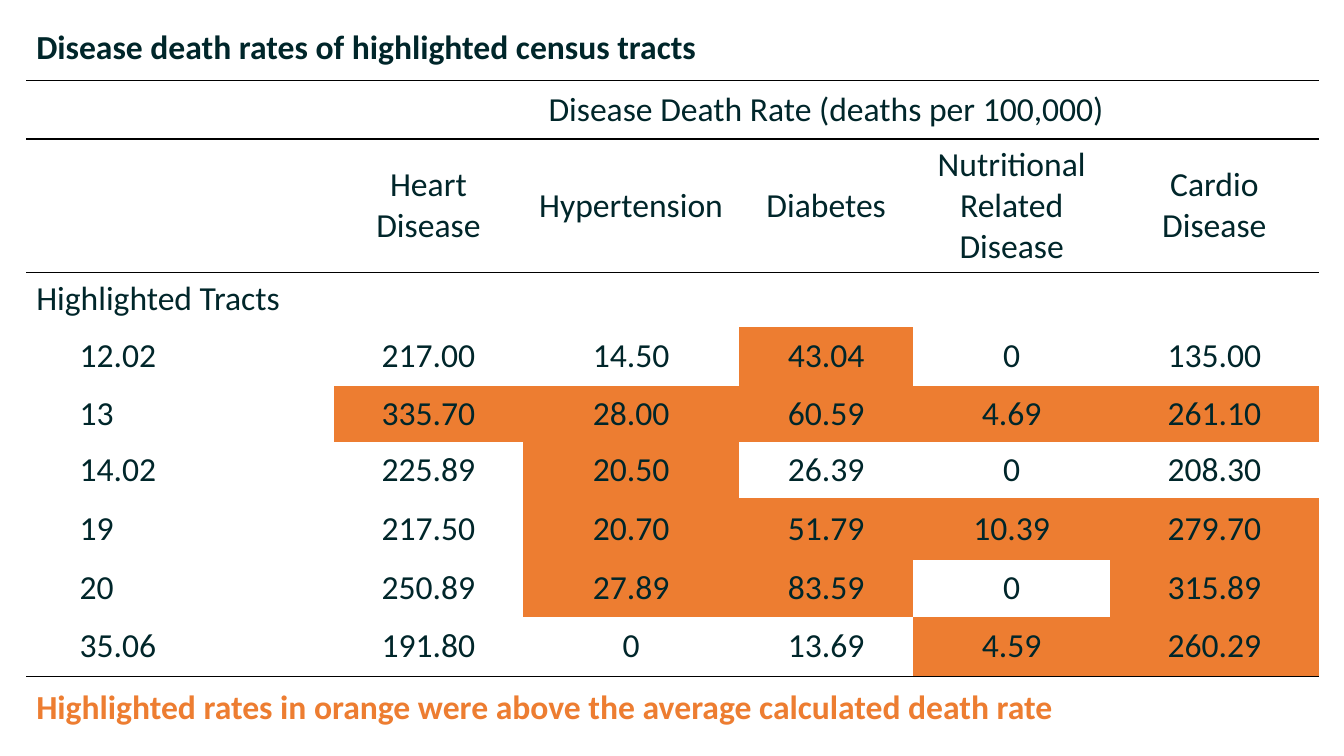
from typing import NamedTuple

from lxml.etree import SubElement
from pptx import Presentation
from pptx.dml.color import RGBColor
from pptx.enum.shapes import MSO_SHAPE
from pptx.enum.text import MSO_ANCHOR, PP_ALIGN
from pptx.oxml.ns import qn
from pptx.slide import Slide
from pptx.table import Table, _Cell as Cell
from pptx.util import Inches, Pt

WHITE = RGBColor(0xFF, 0xFF, 0xFF)
BLACK = RGBColor(0x00, 0x00, 0x00)
INK = RGBColor(0x00, 0x26, 0x2A)
ORANGE = RGBColor(0xED, 0x7D, 0x31)
PLAIN_STYLE_ID = "{2D5ABB26-0587-4C30-8999-92F81FD0307C}"

COLUMN_WIDTHS = [0.43, 2.62, 1.88, 2.14, 1.73, 1.95, 2.07]
ROW_HEIGHTS = [0.64, 0.58, 1.32, 0.54, 0.59, 0.56, 0.55, 0.62, 0.56, 0.59, 0.64]
TITLE_ROW, GROUP_ROW, HEADING_ROW, SECTION_ROW, FIRST_TRACT_ROW = range(5)
NOTE_ROW = len(ROW_HEIGHTS) - 1
LAST_COLUMN = len(COLUMN_WIDTHS) - 1
FIRST_RATE_COLUMN = 2
RULED_ROWS = {TITLE_ROW, GROUP_ROW, NOTE_ROW - 1}

DISEASES = [
    "Heart Disease",
    "Hypertension",
    "Diabetes",
    "Nutritional Related Disease",
    "Cardio\nDisease",
]


class Tract(NamedTuple):
    """A census tract; above_average holds the indexes of its highlighted rates."""
    name: str
    rates: list[str]
    above_average: set[int]


TRACTS = [
    Tract("12.02", ["217.00", "14.50", "43.04", "0", "135.00"], {2}),
    Tract("13", ["335.70", "28.00", "60.59", "4.69", "261.10"], {0, 1, 2, 3, 4}),
    Tract("14.02", ["225.89", "20.50", "26.39", "0", "208.30"], {1}),
    Tract("19", ["217.50", "20.70", "51.79", "10.39", "279.70"], {1, 2, 3, 4}),
    Tract("20", ["250.89", "27.89", "83.59", "0", "315.89"], {1, 2, 4}),
    Tract("35.06", ["191.80", "0", "13.69", "4.59", "260.29"], {3, 4}),
]


def write_text(cell: Cell, text: str, *, bold: bool = False, color: RGBColor = INK,
               align: PP_ALIGN = PP_ALIGN.LEFT) -> None:
    cell.text = text
    cell.vertical_anchor = MSO_ANCHOR.MIDDLE
    for paragraph in cell.text_frame.paragraphs:
        paragraph.alignment = align
        font = paragraph.runs[0].font
        font.name, font.size, font.bold = "Calibri", Pt(24), bold
        font.color.rgb = color


def add_border(cell: Cell, side: str) -> None:
    line = SubElement(cell._tc.get_or_add_tcPr(), qn(f"a:ln{side}"), w=str(Pt(1)))
    SubElement(SubElement(line, qn("a:solidFill")), qn("a:srgbClr"), val=str(BLACK))


def add_panel(slide: Slide) -> None:
    panel = slide.shapes.add_shape(
        MSO_SHAPE.RECTANGLE, Inches(0.06), Inches(0.12), Inches(13.22), Inches(7.25))
    panel.shadow.inherit = False
    panel.fill.solid()
    panel.fill.fore_color.rgb = WHITE
    panel.line.color.rgb = WHITE
    panel.line.width = Pt(1)


def add_plain_table(slide: Slide) -> Table:
    """Add an empty, unstyled table with its horizontal rules."""
    table = slide.shapes.add_table(
        len(ROW_HEIGHTS), len(COLUMN_WIDTHS), Inches(0.26), Inches(0.16),
        Inches(sum(COLUMN_WIDTHS)), Inches(sum(ROW_HEIGHTS))).table
    table.first_row = table.horz_banding = False
    table._tbl.tblPr.find(qn("a:tableStyleId")).text = PLAIN_STYLE_ID
    for column, width in zip(table.columns, COLUMN_WIDTHS):
        column.width = Inches(width)
    for row_index, (row, height) in enumerate(zip(table.rows, ROW_HEIGHTS)):
        row.height = Inches(height)
        for cell in row.cells:
            if row_index - 1 in RULED_ROWS:
                add_border(cell, "T")
            if row_index in RULED_ROWS:
                add_border(cell, "B")
            cell.fill.background()
    return table


def merge_columns(table: Table, row: int, first: int, last: int) -> Cell:
    cell = table.cell(row, first)
    cell.merge(table.cell(row, last))
    return cell


def fill_table(table: Table) -> None:
    write_text(merge_columns(table, TITLE_ROW, 0, LAST_COLUMN),
               "Disease death rates of highlighted census tracts", bold=True)
    for row in (GROUP_ROW, HEADING_ROW):
        merge_columns(table, row, 0, 1)
    write_text(merge_columns(table, GROUP_ROW, FIRST_RATE_COLUMN, LAST_COLUMN),
               "Disease Death Rate (deaths per 100,000)", align=PP_ALIGN.CENTER)
    for column, disease in enumerate(DISEASES, FIRST_RATE_COLUMN):
        write_text(table.cell(HEADING_ROW, column), disease, align=PP_ALIGN.CENTER)
    write_text(merge_columns(table, SECTION_ROW, 0, 1), "Highlighted Tracts")

    for row, tract in enumerate(TRACTS, FIRST_TRACT_ROW):
        write_text(table.cell(row, 1), tract.name)
        for index, rate in enumerate(tract.rates):
            cell = table.cell(row, FIRST_RATE_COLUMN + index)
            write_text(cell, rate, align=PP_ALIGN.CENTER)
            if index in tract.above_average:
                cell.fill.solid()
                cell.fill.fore_color.rgb = ORANGE

    write_text(merge_columns(table, NOTE_ROW, 0, LAST_COLUMN),
               "Highlighted rates in orange were above the average calculated death rate",
               bold=True, color=ORANGE)


def main() -> None:
    presentation = Presentation()
    presentation.slide_width = Inches(13.33)
    presentation.slide_height = Inches(7.5)
    slide = presentation.slides.add_slide(presentation.slide_layouts[6])
    add_panel(slide)
    fill_table(add_plain_table(slide))
    presentation.save("out.pptx")


if __name__ == "__main__":
    main()
